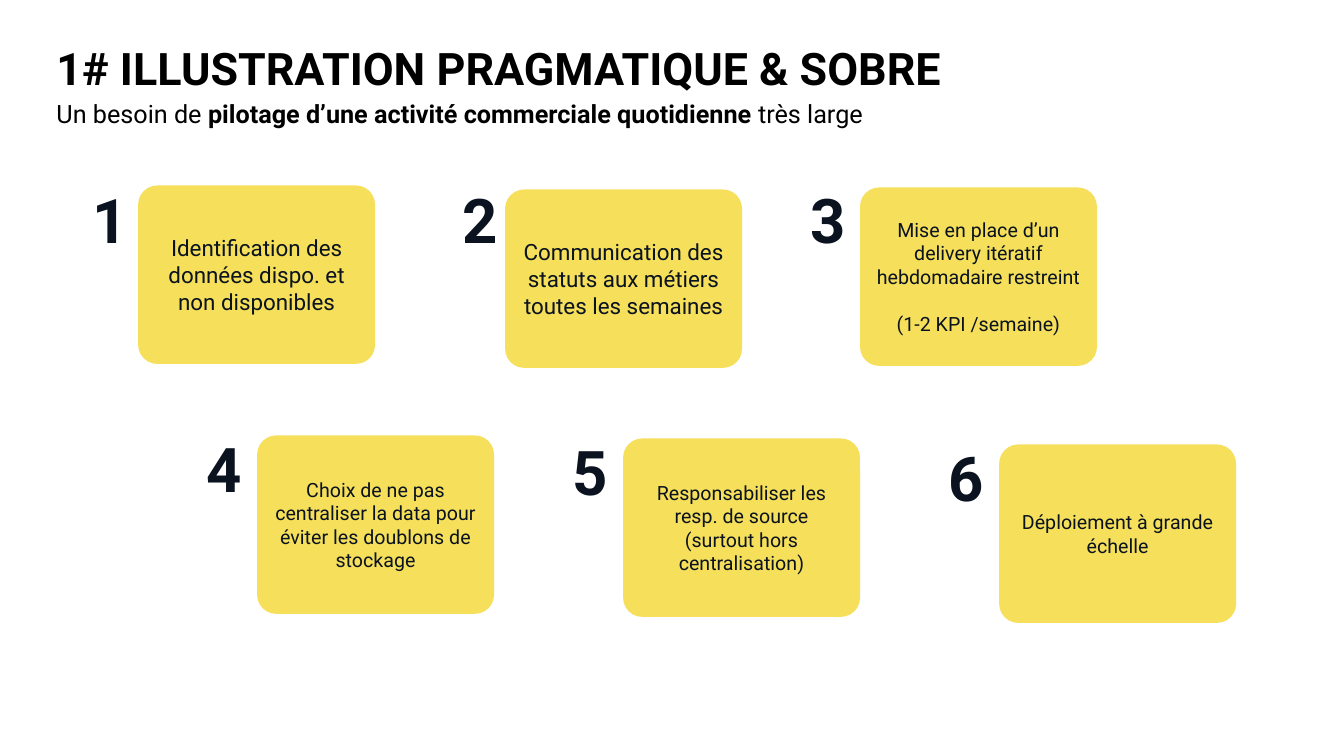
"""Build the slide of six numbered steps towards a pragmatic delivery."""
from lxml import etree
from pptx import Presentation
from pptx import util as u
from pptx.dml.color import RGBColor
from pptx.enum import shapes, text
from pptx.oxml import ns

INK, BLACK, YELLOW = "0A131F", "000000", "F6DF5A"
CARD_WIDTH, CARD_HEIGHT = 2.35, 1.77
NUMBER_WIDTH, NUMBER_HEIGHT = 1.11, 0.84


def paint(target, color):
    target.rgb = RGBColor.from_string(color)


def style(para, size, color, bold=None, align=text.PP_ALIGN.LEFT):
    para.alignment = align
    para.font.name = "Roboto"
    para.font.size = u.Pt(size)
    para.font.bold = bold
    paint(para.font.color, color)


deck = Presentation()
deck.slide_width, deck.slide_height = u.Inches(13.33), u.Inches(7.5)
page = deck.slides.add_slide(deck.slide_layouts[1])

title, subtitle = page.shapes.title, page.placeholders[1]
for box, top, anchor in (
    (title, 0.44, text.MSO_ANCHOR.MIDDLE),
    (subtitle, 0.98, text.MSO_ANCHOR.TOP),
):
    box.left, box.top = u.Inches(0.56), u.Inches(top)
    box.width, box.height = u.Inches(10.73), u.Inches(0.52)
    frame = box.text_frame
    frame.margin_left = frame.margin_right = frame.margin_top = frame.margin_bottom = 0
    frame.vertical_anchor = anchor
    frame.auto_size = text.MSO_AUTO_SIZE.NONE

title.text_frame.text = "1# ILLUSTRATION PRAGMATIQUE & SOBRE"
para = title.text_frame.paragraphs[0]
para.line_spacing = 0.9
style(para, 32, BLACK, bold=True)

para = subtitle.text_frame.paragraphs[0]
for words, bold in (
    ("Un besoin de ", False),
    ("pilotage d’une activité commerciale quotidienne ", True),
    ("très large", False),
):
    span = para.add_run()
    span.text = words
    span.font.bold = bold
properties = para._p.get_or_add_pPr()
properties.set("marL", "0")
properties.set("indent", "0")
etree.SubElement(properties, ns.qn("a:buNone"))
para.space_before, para.space_after = u.Pt(0), u.Pt(6)
style(para, 18, BLACK)

steps = [
    (0.82, 1.76, 1.37, 1.84, 16, ["Identification des données dispo. et non disponibles"]),
    (4.49, 1.76, 5.01, 1.88, 16, ["Communication des statuts aux métiers toutes les semaines"]),
    (7.94, 1.76, 8.53, 1.86, 14,
     ["Mise en place d’un delivery itératif hebdomadaire restreint", "(1-2 KPI /semaine)"]),
    (1.95, 4.23, 2.55, 4.32, 14,
     ["Choix de ne pas centraliser la data pour éviter les doublons de stockage"]),
    (5.58, 4.26, 6.18, 4.35, 14,
     ["Responsabiliser les resp. de source (surtout hors centralisation)"]),
    (9.31, 4.32, 9.91, 4.41, 14, ["Déploiement à grande échelle"]),
]
for number, (number_left, number_top, left, top, size, lines) in enumerate(steps, 1):
    group = page.shapes.add_group_shape()
    label = group.shapes.add_textbox(
        u.Inches(number_left), u.Inches(number_top),
        u.Inches(NUMBER_WIDTH), u.Inches(NUMBER_HEIGHT))
    label.text_frame.word_wrap = True
    label.text_frame.text = str(number)
    style(label.text_frame.paragraphs[0], 44, INK, bold=True)

    card = group.shapes.add_shape(
        shapes.MSO_SHAPE.ROUNDED_RECTANGLE, u.Inches(left), u.Inches(top),
        u.Inches(CARD_WIDTH), u.Inches(CARD_HEIGHT))
    card.adjustments[0] = 0.107
    card.shadow.inherit = False
    card.fill.solid()
    paint(card.fill.fore_color, YELLOW)
    card.line.fill.background()
    frame = card.text_frame
    frame.word_wrap = True
    frame.vertical_anchor = text.MSO_ANCHOR.MIDDLE
    frame.text = "\n".join(lines)
    for para in frame.paragraphs:
        style(para, size, INK, align=text.PP_ALIGN.CENTER)
    for para in frame.paragraphs[1:]:
        para.space_before = u.Pt(17)

deck.save("out.pptx")
